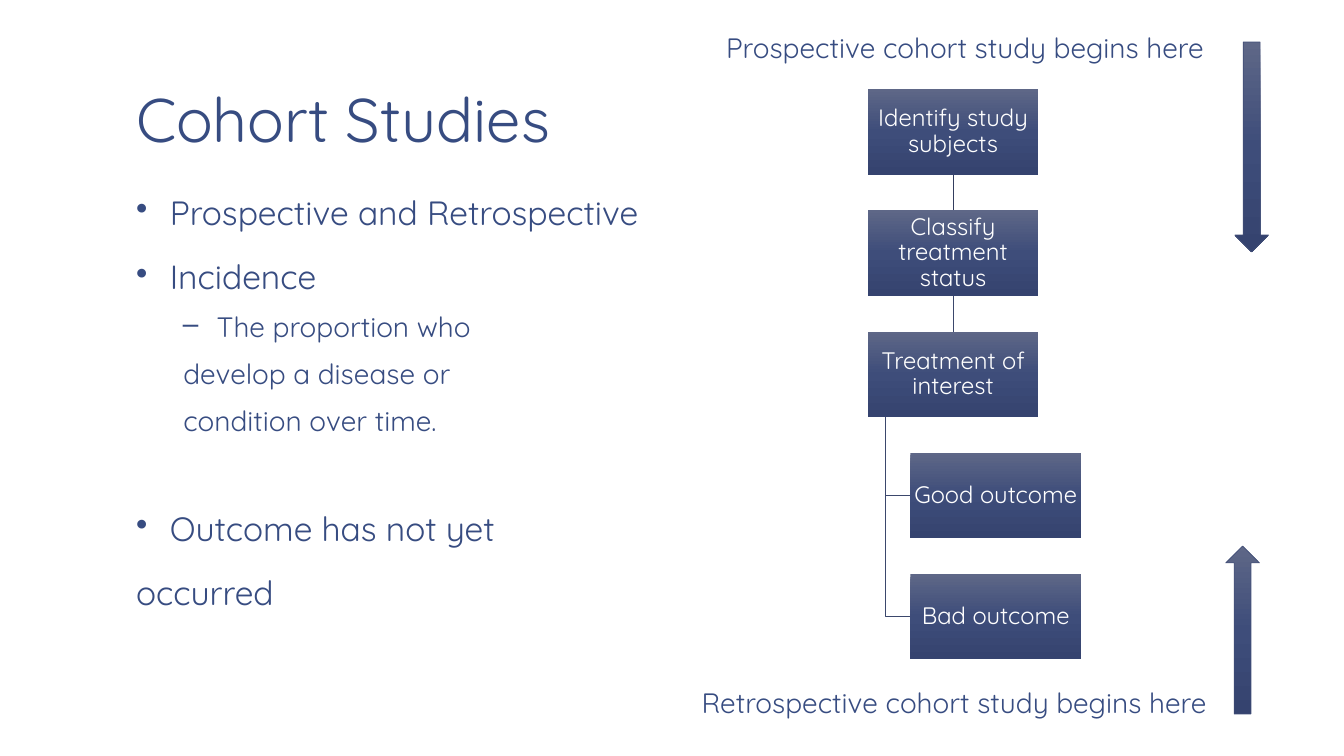
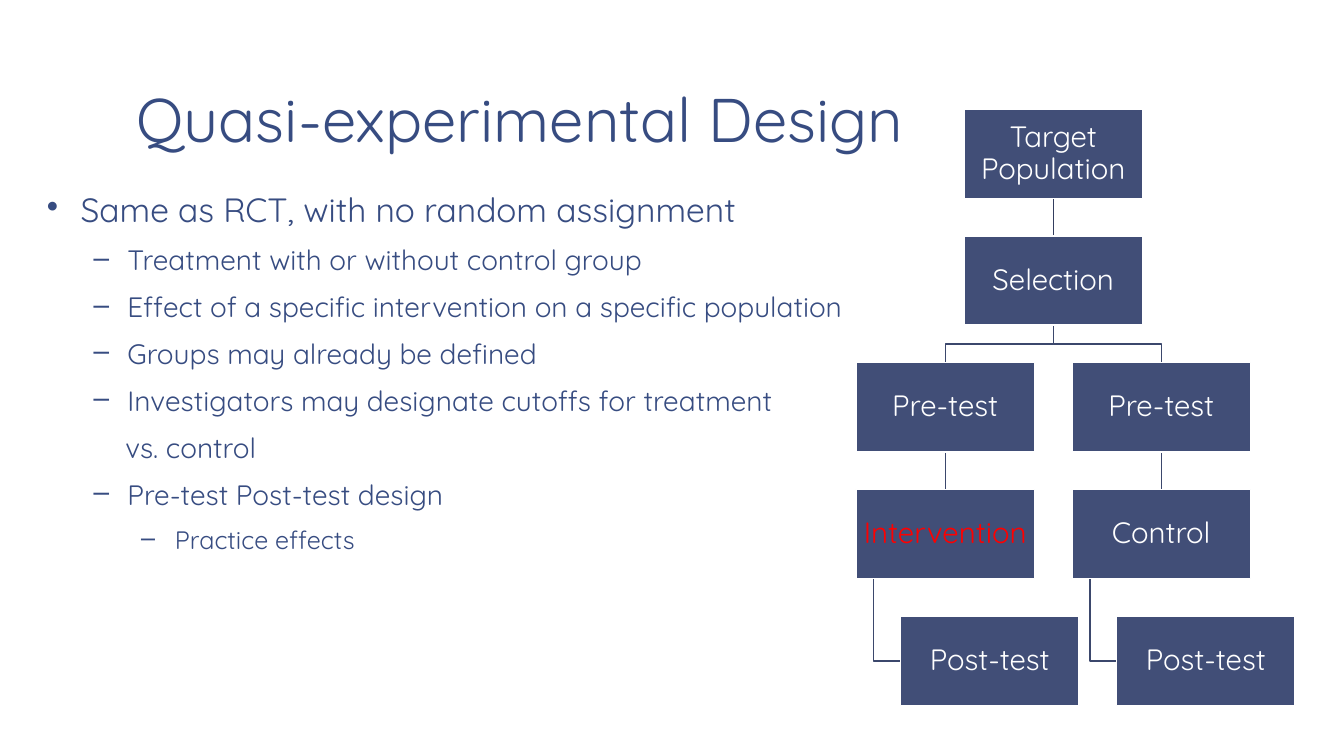
"""Build two slides on cohort studies and quasi-experimental design."""
from collections import namedtuple
from dataclasses import dataclass
from typing import Any

from lxml import etree
import copy
from pptx import Presentation
from pptx.dml.color import RGBColor
from pptx.enum import shapes, text
from pptx.oxml import ns
from pptx.util import Cm, Pt

FONT = "Quicksand"
COLORS = {
    "ink": "374C81",
    "white": "FFFFFF",
    "alert": "FF0000",
    "box": "414E77",
    "root_link": "343E5F",
    "link": "3B476C",
    "shade_top": "5E6787",
    "shade_middle": "3E4D7A",
    "shade_bottom": "35436F",
}
SHADES = ((0, "shade_top"), (0.5, "shade_middle"), (1, "shade_bottom"))

Level = namedtuple("Level", "depth margin hang size before mark")
TOPIC = Level(0, 0.85, 0.85, 24, 18.7, "•")
TOPIC_REST = TOPIC._replace(margin=0, hang=0, mark=None)
NEW_TOPIC = TOPIC._replace(before=52)
POINT = Level(1, 2.03, 0.85, 20, 10.7, "–")
POINT_REST = POINT._replace(margin=1.19, hang=0, mark=None)
POINT_REST_INDENTED = POINT_REST._replace(margin=1.98)
DETAIL = Level(2, 3.23, 0.85, 18, 10.7, "–")

COHORT_POINTS = [
    (TOPIC, "Prospective and Retrospective"),
    (TOPIC, "Incidence"),
    (POINT, "The proportion who"),
    (POINT_REST, "develop a disease or"),
    (POINT_REST, "condition over time."),
    (NEW_TOPIC, "Outcome has not yet"),
    (TOPIC_REST, "occurred"),
]
QUASI_POINTS = [
    (TOPIC, "Same as RCT, with no random assignment"),
    (POINT, "Treatment with or without control group"),
    (POINT, "Effect of a specific intervention on a specific population"),
    (POINT, "Groups may already be defined"),
    (POINT, "Investigators may designate cutoffs for treatment"),
    (POINT_REST_INDENTED, "vs. control"),
    (POINT, "Pre-test Post-test design"),
    (DETAIL, "Practice effects"),
]


def rgb(name):
    """Return the named colour."""
    return RGBColor.from_string(COLORS[name])


def write(paragraph, words, size, color="ink"):
    """Add one formatted run to a paragraph."""
    run = paragraph.add_run()
    run.text = words
    run.font.name = FONT
    run.font.size = Pt(size)
    run.font.color.rgb = rgb(color)


def set_frame(frame, anchor, side, end):
    """Set wrapping, anchor and insets of a text frame."""
    frame.word_wrap = True
    frame.auto_size = text.MSO_AUTO_SIZE.NONE
    frame.vertical_anchor = anchor
    frame.margin_left = frame.margin_right = Cm(side)
    frame.margin_top = frame.margin_bottom = Cm(end)


def shade(shape):
    """Fill a shape with the vertical three-stop gradient."""
    shape.fill.gradient()
    shape.fill.gradient_angle = 270
    stops = shape._element.spPr.find(".//" + ns.qn("a:gsLst"))
    stops.append(copy.deepcopy(stops[-1]))
    for stop, (position, name) in zip(shape.fill.gradient_stops, SHADES):
        stop.position = position
        stop.color.rgb = rgb(name)


def set_line(shape, color, width):
    """Set the colour and width of a line or outline."""
    shape.line.color.rgb = rgb(color)
    shape.line.width = Pt(width)


def add_titled_slide(deck, heading):
    """Add a title-only slide with its heading formatted."""
    slide = deck.slides.add_slide(deck.slide_layouts[5])
    title = slide.shapes.title
    title.left, title.top, title.width, title.height = map(Cm, (3.1, 0.2, 28.22, 3.89))
    set_frame(title.text_frame, text.MSO_ANCHOR.BOTTOM, 0.33, 0.18)
    paragraph = title.text_frame.paragraphs[0]
    paragraph.alignment = text.PP_ALIGN.LEFT
    paragraph.line_spacing = 0.85
    write(paragraph, heading, 44)
    return slide


def add_points(slide, left, top, points):
    """Add the multi-level list of points."""
    frame = slide.shapes.add_textbox(*map(Cm, (left, top, 28.22, 12.42))).text_frame
    set_frame(frame, text.MSO_ANCHOR.TOP, 0.33, 0.18)
    for index, (level, words) in enumerate(points):
        paragraph = frame.add_paragraph() if index else frame.paragraphs[0]
        paragraph.level = level.depth
        properties = paragraph._p.get_or_add_pPr()
        properties.set("marL", str(Cm(level.margin)))
        properties.set("indent", str(-Cm(level.hang)))
        if level.mark:
            etree.SubElement(properties, ns.qn("a:buChar")).set("char", level.mark)
        paragraph.line_spacing = 0.95
        if index:
            paragraph.space_before = Pt(level.before)
        write(paragraph, words, level.size)


def add_caption(slide, left, top, width, words):
    """Add a centred caption."""
    frame = slide.shapes.add_textbox(*map(Cm, (left, top, width, 1.11))).text_frame
    set_frame(frame, text.MSO_ANCHOR.TOP, 0.25, 0.13)
    frame.paragraphs[0].alignment = text.PP_ALIGN.CENTER
    write(frame.paragraphs[0], words, 20)


def add_time_arrow(slide, kind, left, top, height):
    """Add a shaded block arrow."""
    arrow = slide.shapes.add_shape(kind, *map(Cm, (left, top, 0.85, height)))
    arrow.shadow.inherit = False
    shade(arrow)
    set_line(arrow, "box", 0.5)


@dataclass
class Tree:
    """A flow of boxes whose gaps all follow from the box width."""

    slide: Any
    left: float
    top: float
    width: float
    size: int
    line: float
    shaded: bool

    def corner(self, column, row, hanging=False):
        """Return the left and top of a box."""
        shift = 1.21 * column + (0.25 if hanging else 0)
        return self.left + shift * self.width, self.top + 0.71 * row * self.width

    def middle(self, column, row, lower=False):
        """Return the top or bottom middle of a box."""
        x, y = self.corner(column, row)
        return x + self.width / 2, y + (self.width / 2 if lower else 0)

    def straight(self, column, row):
        """Link a box to the one below it."""
        ends = self.middle(column, row, True) + self.middle(column, row + 1)
        link = self.slide.shapes.add_connector(
            shapes.MSO_CONNECTOR.STRAIGHT, *map(Cm, ends))
        etree.SubElement(link._element.spPr, ns.qn("a:effectLst"))
        set_line(link, "link" if row else "root_link", self.line)

    def bent(self, *points):
        """Draw a link with right-angle bends."""
        start, *rest = [(Cm(x), Cm(y)) for x, y in points]
        builder = self.slide.shapes.build_freeform(*start)
        builder.add_line_segments(rest, close=False)
        link = builder.convert_to_shape()
        link.shadow.inherit = False
        link.fill.background()
        set_line(link, "link", self.line)

    def fork(self, column, row, child_column):
        """Link a box to one in another column of the next row."""
        x, y = self.middle(column, row, True)
        child_x, child_y = self.middle(child_column, row + 1)
        bend = (y + child_y) / 2
        self.bent((x, y), (x, bend), (child_x, bend), (child_x, child_y))

    def hang(self, column, row, child_row):
        """Link a box to a hanging box below it."""
        x, y = self.corner(column, row)
        child_x, child_y = self.corner(column, child_row, True)
        stem, level = x + self.width / 10, child_y + self.width / 4
        self.bent((stem, y + self.width / 2), (stem, level), (child_x, level))

    def box(self, words, column, row, hanging=False, color="white"):
        """Add a labelled box."""
        place = self.corner(column, row, hanging) + (self.width, self.width / 2)
        box = self.slide.shapes.add_shape(shapes.MSO_SHAPE.RECTANGLE, *map(Cm, place))
        box.shadow.inherit = False
        if self.shaded:
            shade(box)
            box.line.fill.background()
        else:
            box.fill.solid()
            box.fill.fore_color.rgb = rgb("box")
            set_line(box, "white", 1)
        set_frame(box.text_frame, text.MSO_ANCHOR.MIDDLE, 0.03, 0.03)
        paragraph = box.text_frame.paragraphs[0]
        paragraph.alignment = text.PP_ALIGN.CENTER
        paragraph.line_spacing = 0.9
        write(paragraph, words, self.size, color)


def build_cohort(deck):
    """Build the cohort studies slide."""
    slide = add_titled_slide(deck, "Cohort Studies")
    add_points(slide, 3.1, 4.72, COHORT_POINTS)
    tree = Tree(slide, 21.87, 2.25, 4.3, 17, 0.5, True)
    steps = ["Identify study subjects", "Classify treatment status", "Treatment of interest"]
    outcomes = ["Good outcome", "Bad outcome"]
    for row in range(len(steps) - 1):
        tree.straight(0, row)
    for row, outcome in enumerate(outcomes, len(steps)):
        tree.hang(0, len(steps) - 1, row)
        tree.box(outcome, 0, row, hanging=True)
    for row, step in enumerate(steps):
        tree.box(step, 0, row)
    add_caption(slide, 17.55, 0.64, 13.54, "Prospective cohort study begins here")
    add_caption(slide, 16.08, 17.15, 15.93, "Retrospective cohort study begins here")
    add_time_arrow(slide, shapes.MSO_SHAPE.UP_ARROW, 30.89, 13.76, 4.23)
    add_time_arrow(slide, shapes.MSO_SHAPE.DOWN_ARROW, 31.12, 1.06, 5.29)


def build_quasi(deck):
    """Build the quasi-experimental design slide."""
    slide = add_titled_slide(deck, "Quasi-experimental Design")
    add_points(slide, 0.85, 4.66, QUASI_POINTS)
    tree = Tree(slide, 21.57, 2.75, 4.5, 21, 1, False)
    tree.straight(0.5, 0)
    for column in range(2):
        tree.fork(0.5, 1, column)
        tree.straight(column, 2)
        tree.hang(column, 3, 4)
    tree.box("Target Population", 0.5, 0)
    tree.box("Selection", 0.5, 1)
    for column, (arm, color) in enumerate([("Intervention", "alert"), ("Control", "white")]):
        tree.box("Pre-test", column, 2)
        tree.box(arm, column, 3, color=color)
        tree.box("Post-test", column, 4, hanging=True)


def main():
    """Build and save the deck."""
    deck = Presentation()
    deck.slide_width, deck.slide_height = Cm(33.87), Cm(19.05)
    build_cohort(deck)
    build_quasi(deck)
    deck.save("out.pptx")


if __name__ == "__main__":
    main()
